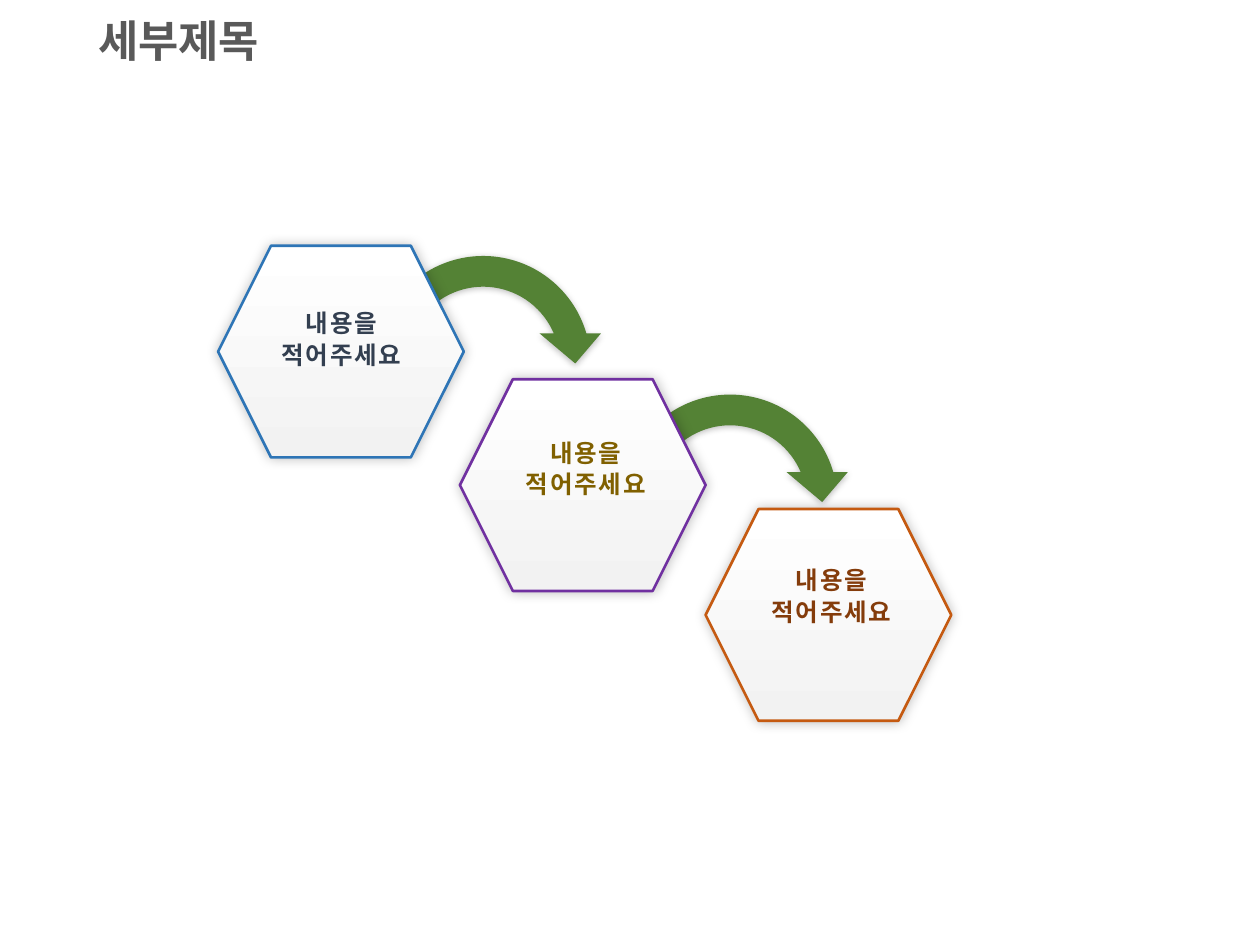
from dataclasses import dataclass

from lxml import etree
from pptx import Presentation, util as u
from pptx.dml.color import RGBColor
from pptx.enum import shapes, text
from pptx.oxml.ns import qn


@dataclass(frozen=True)
class Theme:
    latin: str = "Calibri"
    korean: str = "Noto Sans CJK KR"
    title_size: float = 25
    label_size: float = 14
    title: str = "595959"
    arrow: str = "548235"
    top: str = "FFFFFF"
    bottom: str = "F2F2F2"
    shadow: str = "000000"


THEME = Theme()
TITLE = "세부제목"
LABEL = ["내용을", "적어주세요"]
STEPS = [
    # hexagon corner, label corner, outline, label colour
    dict(at=(124.6, 140.4), label_at=(133.2, 171.4), outline="2E75B6", ink="333F50"),
    dict(at=(262.8, 216.7), label_at=(272.9, 245.5), outline="7030A0", ink="806000"),
    dict(at=(403.2, 290.9), label_at=(413.3, 318.2), outline="C55A11", ink="843C0B"),
]
ARROWS = [(347, 216.7), (205.9, 137.5)]
HEXAGON_SIZE = (140.4, 121)
ARROW_SIZE = (140.4, 140.4)
LABEL_SIZE = (123.8, 43.9)


def rgb(value):
    return RGBColor.from_string(value)


def points(*lengths):
    return [u.Pt(length) for length in lengths]


def add_shadow(shape, blur, distance, angle):
    """Give the shape a soft outer shadow at 25% opacity."""
    shape.shadow.inherit = False
    effects = shape._element.spPr.find(qn("a:effectLst"))
    outer = etree.SubElement(
        effects, qn("a:outerShdw"), blurRad=str(u.Pt(blur)), dist=str(u.Pt(distance)),
        dir=str(angle * 60000), algn="ctr", rotWithShape="0")
    colour = etree.SubElement(outer, qn("a:srgbClr"), val=THEME.shadow)
    etree.SubElement(colour, qn("a:alpha"), val="25000")


def add_text(slide, lines, at, size, font, points_high, ink, anchor, align, line_spacing, tracking=0):
    box = slide.shapes.add_textbox(*points(*at, *size))
    frame = box.text_frame
    frame.word_wrap = True
    frame.vertical_anchor = anchor
    frame.text = "\n".join(lines)
    for paragraph in frame.paragraphs:
        paragraph.alignment = align
        paragraph.line_spacing = line_spacing
        paragraph.font.name = font
        paragraph.font.size = u.Pt(points_high)
        paragraph.font.bold = True
        paragraph.font.color.rgb = rgb(ink)
        defaults = paragraph._p.pPr.find(qn("a:defRPr"))
        defaults.set("spc", str(tracking * 100))
        etree.SubElement(defaults, qn("a:ea"), typeface=THEME.korean)
    return box


def add_arrow(slide, at):
    arrow = slide.shapes.add_shape(
        shapes.MSO_SHAPE.CIRCULAR_ARROW, *points(*at, *ARROW_SIZE))
    arrow.fill.solid()
    arrow.fill.fore_color.rgb = rgb(THEME.arrow)
    arrow.line.fill.background()
    add_shadow(arrow, blur=4, distance=1, angle=90)


def add_hexagon(slide, at, outline):
    hexagon = slide.shapes.add_shape(
        shapes.MSO_SHAPE.HEXAGON, *points(*at, *HEXAGON_SIZE))
    hexagon.fill.gradient()
    hexagon.fill.gradient_angle = 270
    for stop, colour in zip(hexagon.fill.gradient_stops, (THEME.top, THEME.bottom)):
        stop.color.rgb = rgb(colour)
    hexagon.line.color.rgb = rgb(outline)
    hexagon.line.width = u.Pt(1.5)
    add_shadow(hexagon, blur=7, distance=0, angle=0)


def main():
    deck = Presentation()
    deck.slide_width, deck.slide_height = points(720, 540)
    slide = deck.slides.add_slide(deck.slide_layouts[6])

    add_text(slide, [TITLE], (49, 4.3), (620.6, 41), THEME.latin, THEME.title_size,
             THEME.title, text.MSO_ANCHOR.MIDDLE, text.PP_ALIGN.LEFT, 0.9)
    for at in ARROWS:
        add_arrow(slide, at)
    for step in STEPS:
        add_hexagon(slide, step["at"], step["outline"])
    for step in STEPS:
        label = add_text(slide, LABEL, step["label_at"], LABEL_SIZE, THEME.korean,
                         THEME.label_size, step["ink"], text.MSO_ANCHOR.TOP,
                         text.PP_ALIGN.CENTER, u.Pt(18), tracking=1)
        label.text_frame.auto_size = text.MSO_AUTO_SIZE.SHAPE_TO_FIT_TEXT

    deck.save("out.pptx")


if __name__ == "__main__":
    main()
